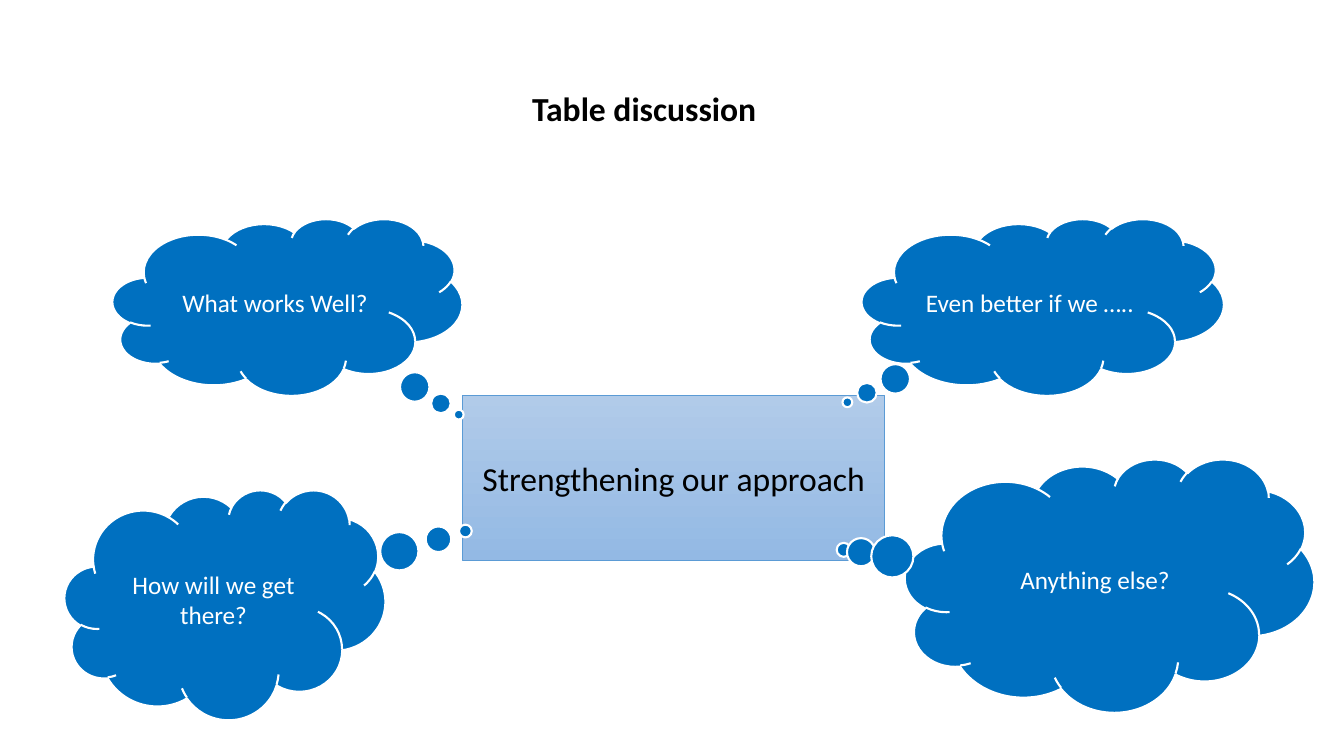
from pptx import Presentation
from pptx.dml.color import RGBColor
from pptx.enum.shapes import MSO_SHAPE as Shape
from pptx.enum.text import MSO_ANCHOR as Anchor, PP_ALIGN as Align
from pptx.util import Cm, Pt

BLACK = RGBColor(0x00, 0x00, 0x00)
WHITE = RGBColor(0xFF, 0xFF, 0xFF)
CLOUD_BLUE = RGBColor(0x00, 0x70, 0xC0)
EDGE_BLUE = RGBColor(0x5B, 0x9B, 0xD5)
TOPIC_TOP = RGBColor(0xB1, 0xCB, 0xE9)
TOPIC_BOTTOM = RGBColor(0x93, 0xB9, 0xE4)

# Text, (left, top, width, height) in cm, and the offset of the bubble tail
CLOUDS = [
    ("Even better if we …..", (21.72, 5.51, 9.12, 4.45), (-0.54, 0.54)),
    ("What works Well?", (2.84, 5.51, 8.81, 4.45), (0.49, 0.61)),
    ("How will we get there?", (1.63, 12.34, 8.08, 5.79), (0.75, -0.32)),
    ("Anything else?", (22.81, 11.56, 10.31, 6.38), (-0.65, -0.14)),
]


class DiscussionPage:
    font_name = "Calibri"
    heading_size = Pt(24)
    cloud_size = Pt(18)

    def __init__(self, deck):
        self.page = deck.slides.add_slide(deck.slide_layouts[6])

    def set_text(self, box, text, size, color, align=Align.CENTER, bold=False):
        frame = box.text_frame
        frame.word_wrap = True
        frame.text = text
        para = frame.paragraphs[0]
        para.alignment = align
        font = para.runs[0].font
        font.name = self.font_name
        font.size = size
        font.bold = bold
        font.color.rgb = color

    def add_outlined(self, kind, place, line_color, line_width):
        """Add a preset shape with a line, no shadow and centred text."""
        box = self.page.shapes.add_shape(kind, *map(Cm, place))
        box.shadow.inherit = False
        box.line.color.rgb = line_color
        box.line.width = line_width
        box.text_frame.vertical_anchor = Anchor.MIDDLE
        return box

    def add_heading(self, text, place, indent):
        box = self.page.shapes.add_textbox(*map(Cm, place))
        box.text_frame.margin_left = Cm(indent)
        self.set_text(box, text, self.heading_size, BLACK, Align.LEFT, bold=True)

    def add_topic(self, text, place):
        box = self.add_outlined(Shape.RECTANGLE, place, EDGE_BLUE, Pt(0.5))
        box.fill.gradient()
        box.fill.gradient_angle = 270
        for stop, color in zip(box.fill.gradient_stops, (TOPIC_TOP, TOPIC_BOTTOM)):
            stop.color.rgb = color
        self.set_text(box, text, self.heading_size, BLACK)

    def add_cloud(self, text, place, tail):
        box = self.add_outlined(Shape.CLOUD_CALLOUT, place, WHITE, Pt(1.5))
        box.adjustments[0], box.adjustments[1] = tail
        box.fill.solid()
        box.fill.fore_color.rgb = CLOUD_BLUE
        self.set_text(box, text, self.cloud_size, WHITE)


def main():
    deck = Presentation()
    deck.slide_width, deck.slide_height = Cm(33.87), Cm(19.05)
    discussion = DiscussionPage(deck)
    discussion.add_topic("Strengthening our approach", (11.66, 9.96, 10.64, 4.17))
    discussion.add_heading("Table discussion", (11.15, 2.08, 12.01, 1.27), indent=2.26)
    for text, place, tail in CLOUDS:
        discussion.add_cloud(text, place, tail)
    deck.save("out.pptx")


if __name__ == "__main__":
    main()
